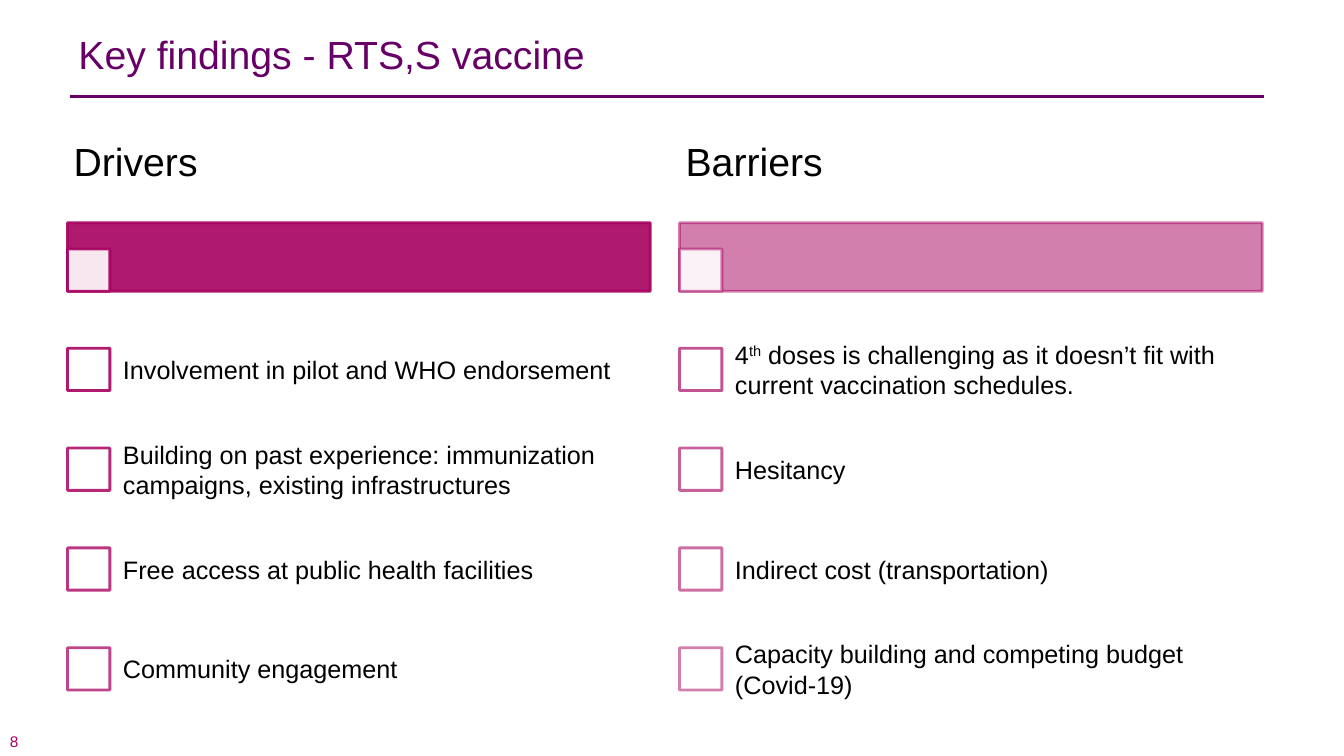
"""Builds the slide of drivers and barriers for the RTS,S vaccine."""
from lxml.etree import SubElement
from pptx import Presentation
from pptx.dml.color import RGBColor
from pptx.enum.shapes import MSO_CONNECTOR, MSO_SHAPE
from pptx.enum.text import MSO_ANCHOR
from pptx.oxml.ns import qn
from pptx.util import Inches, Pt

TITLE = "Key findings - RTS,S vaccine"
PAGE = "8"
PURPLE, MAGENTA, WHITE, BLACK = "660066", "A7005F", "FFFFFF", "000000"
COLUMNS = [
    {"heading": "Drivers", "left": 0.67, "bar_opacity": 90, "findings": [
        (["Involvement in pilot and WHO endorsement"], 90),
        (["Building on past experience: immunization campaigns, existing infrastructures"], 84),
        (["Free access at public health facilities"], 79),
        (["Community engagement"], 73)]},
    {"heading": "Barriers", "left": 6.74, "bar_opacity": 50, "findings": [
        (["4", "th", " doses is challenging as it doesn’t fit with current vaccination schedules."], 67),
        (["Hesitancy"], 61),
        (["Indirect cost (transportation)"], 56),
        (["Capacity building and competing budget (Covid-19)"], 50)]},
]
COLUMN_WIDTH, BAR_TOP, BAR_HEIGHT = 5.78, 2.21, 0.68
BOX, ROW_TOP, ROW_HEIGHT, TEXT_INDENT = 0.42, 3.17, 0.99, 0.41


def paint(color_format, color, opacity=100):
    color_format.rgb = RGBColor.from_string(color)
    return opacity


def set_solid(fill, holder, color, opacity):
    fill.solid()
    fill.fore_color.rgb = RGBColor.from_string(color)
    if opacity < 100:
        srgb = holder.find(qn("a:solidFill")).find(qn("a:srgbClr"))
        SubElement(srgb, qn("a:alpha")).set("val", str(opacity * 1000))


def add_rect(slide, left, top, width, height, fill, fill_opacity, line_opacity):
    rect = slide.shapes.add_shape(MSO_SHAPE.RECTANGLE, Inches(left), Inches(top),
                                  Inches(width), Inches(height))
    rect.shadow.inherit = False
    rect.line.width = Pt(2)
    set_solid(rect.fill, rect._element.spPr, fill, fill_opacity)
    set_solid(rect.line.fill, rect.line._get_or_add_ln(), MAGENTA, line_opacity)


def add_text(slide, left, top, width, height, runs, size, color,
             insets=(0.1, 0.05), anchor=MSO_ANCHOR.MIDDLE):
    frame = slide.shapes.add_textbox(Inches(left), Inches(top), Inches(width),
                                     Inches(height)).text_frame
    frame.word_wrap = True
    frame.vertical_anchor = anchor
    frame.margin_left = frame.margin_right = Inches(insets[0])
    frame.margin_top = frame.margin_bottom = Inches(insets[1])
    paragraph = frame.paragraphs[0]
    for text in runs:
        run = paragraph.add_run()
        run.text = text
        if text == "th":
            run._r.get_or_add_rPr().set("baseline", "30000")
    paragraph.font.size = Pt(size)
    paragraph.font.name = "Arial"
    paragraph.font.color.rgb = RGBColor.from_string(color)
    return paragraph


def add_column(slide, heading, left, bar_opacity, findings):
    add_rect(slide, left, BAR_TOP, COLUMN_WIDTH, BAR_HEIGHT, MAGENTA, bar_opacity, bar_opacity)
    add_rect(slide, left, BAR_TOP + BAR_HEIGHT - BOX, BOX, BOX, WHITE, 90, bar_opacity)
    add_text(slide, left, 0.99, COLUMN_WIDTH, 1.22, [heading], 28, BLACK, (0.06, 0.04))
    for row, (runs, opacity) in enumerate(findings):
        top = ROW_TOP + row * ROW_HEIGHT
        add_rect(slide, left, top + (ROW_HEIGHT - BOX) / 2, BOX, BOX, WHITE, 100, opacity)
        add_text(slide, left + TEXT_INDENT, top, COLUMN_WIDTH - TEXT_INDENT, ROW_HEIGHT,
                 runs, 18, BLACK, (0.14, 0.14))


def main():
    deck = Presentation()
    deck.slide_width, deck.slide_height = Inches(13.33), Inches(7.5)
    slide = deck.slides.add_slide(deck.slide_layouts[6])
    add_text(slide, 0, 7.26, 1.06, 0.18, [PAGE], 11, MAGENTA, (0.1, 0))
    title = add_text(slide, 0.68, 0.36, 11.87, 0.75, [TITLE], 28, PURPLE, anchor=MSO_ANCHOR.TOP)
    title.line_spacing = Pt(26)
    rule = slide.shapes.add_connector(MSO_CONNECTOR.STRAIGHT, Inches(0.69), Inches(0.96),
                                      Inches(12.54), Inches(0.96))
    rule.line.width = Pt(2)
    set_solid(rule.line.fill, rule.line._get_or_add_ln(), PURPLE, 100)
    SubElement(rule._element.spPr, qn("a:effectLst"))
    for column in COLUMNS:
        add_column(slide, **column)
    deck.save("out.pptx")


if __name__ == "__main__":
    main()
